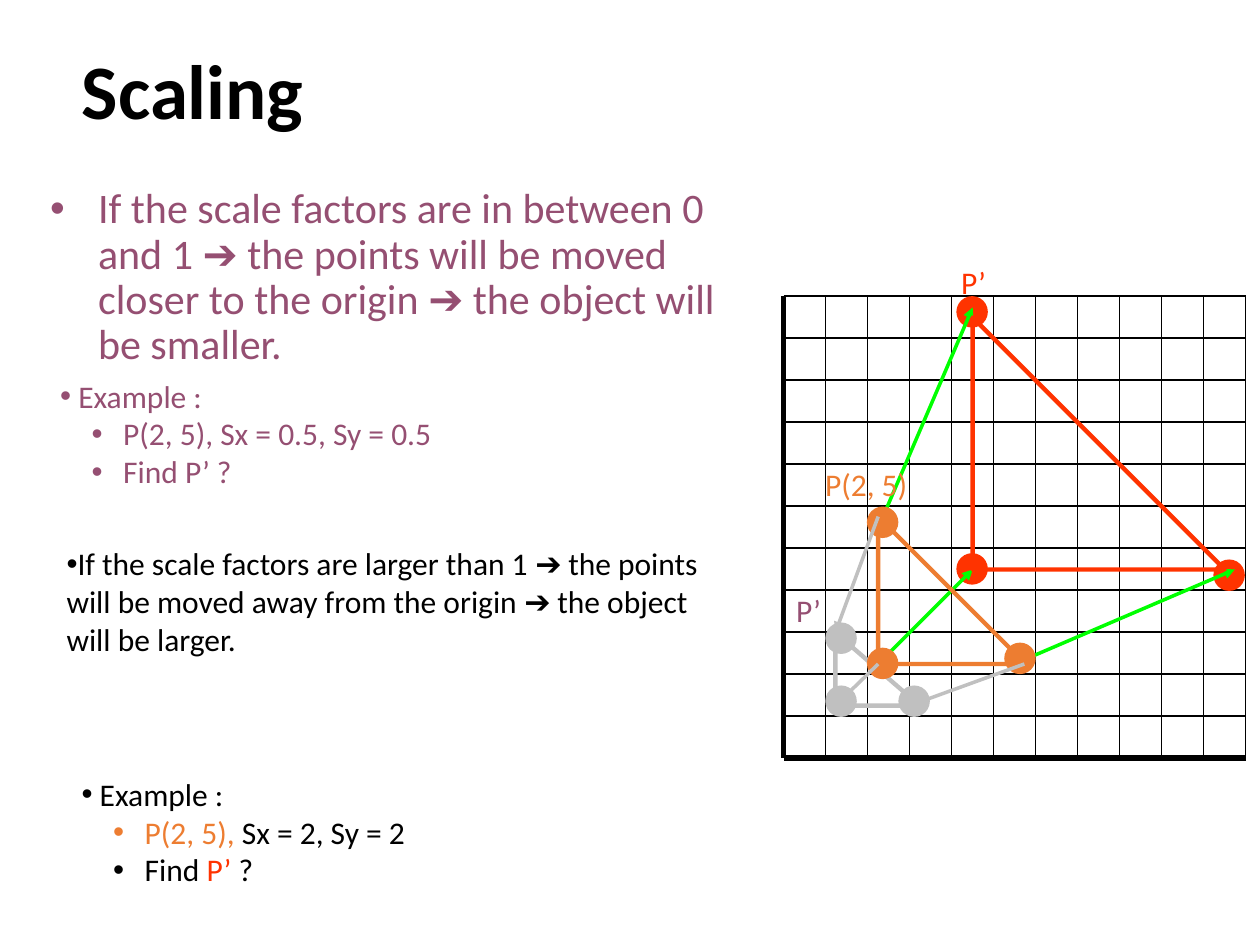
from dataclasses import dataclass

from lxml import etree
from pptx import Presentation
from pptx.dml.color import RGBColor
from pptx.enum.shapes import MSO_CONNECTOR, MSO_SHAPE
from pptx.enum.text import MSO_ANCHOR, MSO_AUTO_SIZE, PP_ALIGN
from pptx.oxml.ns import qn
from pptx.util import Inches, Pt

STRAIGHT = MSO_CONNECTOR.STRAIGHT
OVAL = MSO_SHAPE.OVAL
RIGHT_TRIANGLE = MSO_SHAPE.RIGHT_TRIANGLE
MIDDLE = MSO_ANCHOR.MIDDLE
GROW = MSO_AUTO_SIZE.SHAPE_TO_FIT_TEXT
NO_FIT = MSO_AUTO_SIZE.NONE
LEFT = PP_ALIGN.LEFT


@dataclass(frozen=True)
class Theme:
    font: str = "Calibri"
    bullet_font: str = "Arial"
    black: str = "000000"
    plum: str = "954F72"
    orange: str = "ED7D31"
    red: str = "FF3300"
    green: str = "00FF00"
    grey: str = "C0C0C0"
    title_size: float = 44
    lead_size: float = 24
    body_size: float = 18
    grid_line: float = 0.75
    axis_line: float = 3
    arrow_line: float = 2
    triangle_line: float = 2.5
    dot: float = 0.25


class SlideBuilder:
    def __init__(self, slide, theme):
        self.slide = slide
        self.theme = theme

    def add_run(self, paragraph, text, color, size, bold=False):
        run = paragraph.add_run()
        run.text = text
        run.font.name = self.theme.font
        run.font.size = Pt(size)
        run.font.bold = bold
        run.font.color.rgb = RGBColor.from_string(color)

    def title(self, text, box):
        title = self.slide.shapes.title
        title.left, title.top, title.width, title.height = map(Inches, box)
        frame = title.text_frame
        frame.auto_size = NO_FIT
        frame.vertical_anchor = MIDDLE
        paragraph = frame.paragraphs[0]
        paragraph.alignment = LEFT
        self.add_run(paragraph, text, self.theme.black, self.theme.title_size, True)

    def bullet(self, paragraph, margin, indent):
        props = paragraph._p.get_or_add_pPr()
        props.set("marL", str(Inches(margin)))
        props.set("indent", str(Inches(indent)))
        etree.SubElement(props, qn("a:buFont"), typeface=self.theme.bullet_font)
        etree.SubElement(props, qn("a:buChar"), char="•")

    def text(self, box, paragraphs, size=None, wrap=True, fit=GROW):
        """Each paragraph is (bullet indents or None, [(text, color), ...])."""
        frame = self.slide.shapes.add_textbox(*map(Inches, box)).text_frame
        frame.word_wrap = wrap
        frame.auto_size = fit
        for index, (indents, runs) in enumerate(paragraphs):
            paragraph = frame.add_paragraph() if index else frame.paragraphs[0]
            if indents:
                self.bullet(paragraph, *indents)
            for words, color in runs:
                self.add_run(paragraph, words, color, size or self.theme.body_size)
        return frame

    def label(self, words, color, box):
        self.text(box, [(None, [(words, color)])], wrap=False)

    def line(self, start, end, color, width, arrow=False):
        connector = self.slide.shapes.add_connector(
            STRAIGHT, *map(Inches, (*start, *end)))
        connector.line.color.rgb = RGBColor.from_string(color)
        connector.line.width = Pt(width)
        if arrow:
            etree.SubElement(connector.line._get_or_add_ln(),
                             qn("a:tailEnd"), type="triangle")
        etree.SubElement(connector._element.spPr, qn("a:effectLst"))

    def arrows(self, ends, color):
        for start, end in ends:
            self.line(start, end, color, self.theme.arrow_line, arrow=True)

    def dots(self, corners, color):
        for left, top in corners:
            dot = self.slide.shapes.add_shape(
                OVAL, *map(Inches, (left, top, self.theme.dot, self.theme.dot)))
            dot.shadow.inherit = False
            dot.fill.solid()
            dot.fill.fore_color.rgb = RGBColor.from_string(color)
            dot.line.fill.background()

    def triangle(self, box, color):
        triangle = self.slide.shapes.add_shape(RIGHT_TRIANGLE, *map(Inches, box))
        triangle.shadow.inherit = False
        triangle.fill.background()
        triangle.line.color.rgb = RGBColor.from_string(color)
        triangle.line.width = Pt(self.theme.triangle_line)

    def grid(self, left, top, cells, step):
        right, bottom = left + cells * step, top + cells * step
        black = self.theme.black
        # Axes
        self.line((left, top), (left, bottom), black, self.theme.axis_line)
        self.line((left, bottom), (right, bottom), black, self.theme.axis_line)
        # Grid lines
        for i in range(cells):
            x, y = left + (i + 1) * step, top + i * step
            self.line((x, top), (x, bottom), black, self.theme.grid_line)
            self.line((left, y), (right, y), black, self.theme.grid_line)


def main():
    theme = Theme()
    prs = Presentation()
    prs.slide_width, prs.slide_height = Inches(10), Inches(7.5)
    slide = SlideBuilder(prs.slides.add_slide(prs.slide_layouts[5]), theme)
    hanging, flush, nested = (0.38, -0.38), (0, 0), (0.5, -0.25)

    # Title and lead statement
    slide.title("Scaling", (0.55, 0.08, 8.5, 1.25))
    lead = slide.text(
        (0.3, 1.44, 5.58, 1.92),
        [(hanging, [("If the scale factors are in between 0 and 1 ➔ the points "
                     "will be moved closer to the origin ➔ the object will be "
                     "smaller.", theme.plum)])],
        size=theme.lead_size, fit=NO_FIT)
    lead.paragraphs[0].line_spacing = 0.9
    lead.paragraphs[0].space_before = Pt(4.8)

    # Coordinate grid
    slide.grid(6.22, 2.35, 11, 1 / 3)

    # Vertices of the smaller and larger images
    slide.dots([(6.55, 5.44), (7.13, 5.44), (6.55, 4.94)], theme.grey)
    slide.dots([(7.59, 4.39), (9.63, 4.44), (7.59, 2.35)], theme.red)

    # Enlarging arrows and both scaled triangles
    slide.arrows([((6.97, 4.19), (7.72, 2.44)),
                  ((7.05, 5.19), (7.72, 4.52)),
                  ((8.05, 5.27), (9.8, 4.52))], theme.green)
    slide.triangle((6.63, 5.02, 0.67, 0.58), theme.grey)
    slide.triangle((7.72, 2.52, 2, 2), theme.red)

    # Starting triangle and shrinking arrows
    slide.dots([(6.88, 5.14), (7.97, 5.1), (6.88, 4.02)], theme.orange)
    slide.triangle((6.97, 4.1, 1.17, 1.17), theme.orange)
    slide.arrows([((6.97, 5.27), (6.63, 5.6)),
                  ((6.97, 4.1), (6.63, 5.02)),
                  ((8.13, 5.27), (7.22, 5.6))], theme.grey)

    # Point labels
    slide.label("P(2, 5)", theme.orange, (6.45, 3.64, 0.86, 0.4))
    slide.label("P’", theme.plum, (6.22, 4.64, 0.4, 0.4))
    slide.label("P’", theme.red, (7.53, 2.04, 0.4, 0.4))

    # Shrinking example
    slide.text((0.38, 2.94, 5, 1.01), [
        (flush, [(" Example :", theme.plum)]),
        (nested, [("P(2, 5), Sx = 0.5, Sy = 0.5", theme.plum)]),
        (nested, [("Find P’ ?", theme.plum)])])

    # Enlarging rule and example
    slide.text((0.43, 4.27, 5.45, 1.01), [
        (flush, [("If the scale factors are larger than 1 ➔ the points will be "
                  "moved away from the origin ➔ the object will be larger.",
                  theme.black)])])
    slide.text((0.55, 6.1, 5, 1.01), [
        (flush, [(" Example :", theme.black)]),
        (nested, [("P(2, 5),", theme.orange), (" Sx = 2, Sy = 2", theme.black)]),
        (nested, [("Find ", theme.black), ("P’", theme.red), (" ?", theme.black)])])

    prs.save("out.pptx")


if __name__ == "__main__":
    main()
